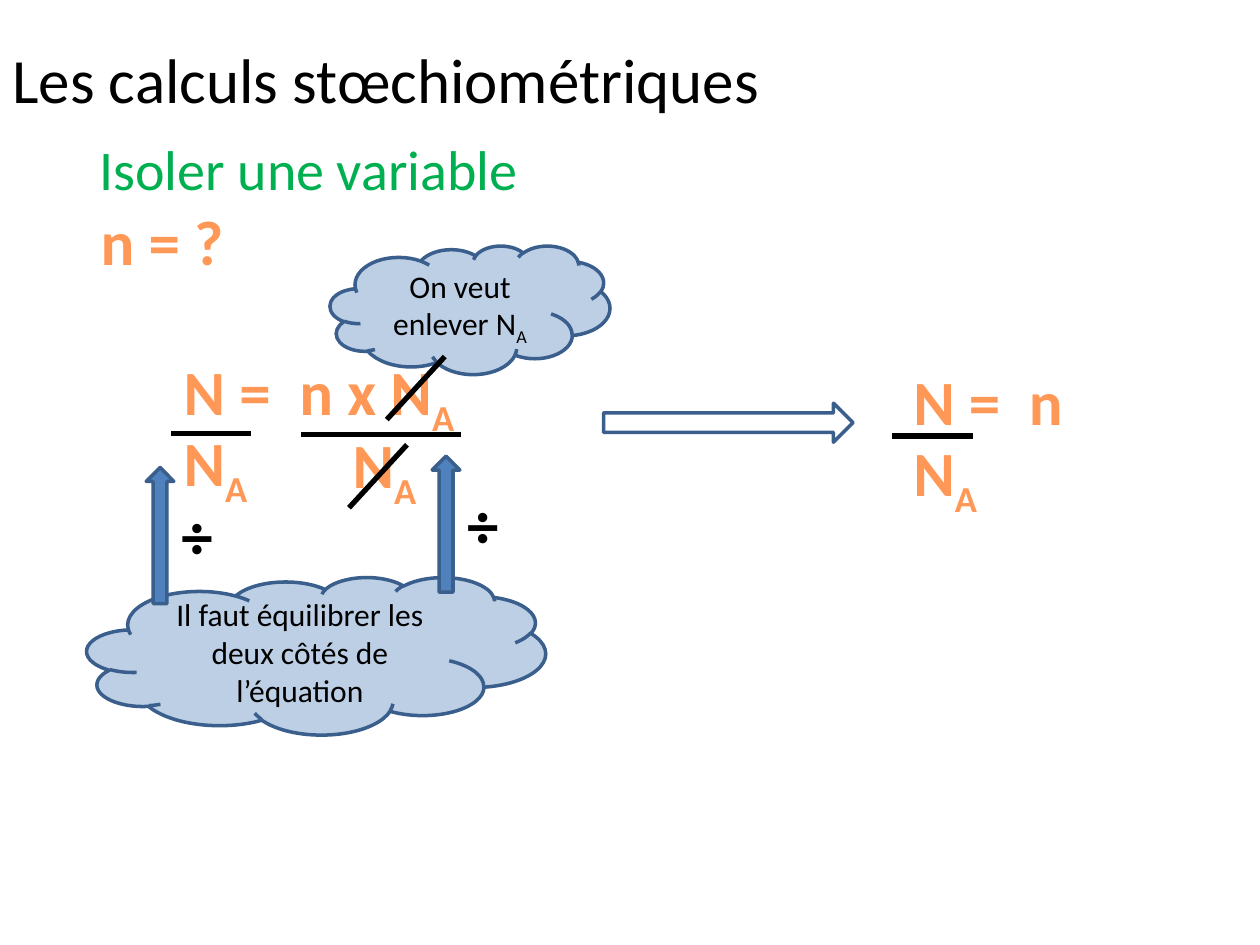
from lxml import etree
from pptx import Presentation
from pptx import util as u
from pptx.dml import color
from pptx.enum import shapes, text
from pptx.oxml import ns

BLACK, GREEN, ORANGE = "000000", "00B050", "FF9856"
BLUE, DARK_BLUE = "4F81BD", "3A5F8C"
SHAPE = shapes.MSO_SHAPE
ALIGN = text.PP_ALIGN


def rgb(value):
    return color.RGBColor.from_string(value)


class Board:
    def __init__(self, slide, font="Calibri"):
        self.slide = slide
        self.font = font

    def add_words(self, frame, content, size, hue, bold=False, subscript="", align=ALIGN.LEFT):
        paragraph = frame.paragraphs[0]
        paragraph.alignment = align
        for part, lowered in ((content, False), (subscript, True)):
            if not part:
                continue
            run = paragraph.add_run()
            run.text = part
            run.font.name = self.font
            run.font.size = u.Pt(size)
            run.font.bold = bold
            run.font.color.rgb = rgb(hue)
            if lowered:
                run.font._element.set("baseline", "-25000")

    def label(self, box, content, size=36, hue=ORANGE, bold=True, subscript="",
              align=ALIGN.LEFT, anchor=text.MSO_ANCHOR.TOP, wrap=True):
        shape = self.slide.shapes.add_textbox(*map(u.Inches, box))
        frame = shape.text_frame
        frame.word_wrap = wrap
        frame.vertical_anchor = anchor
        self.add_words(frame, content, size, hue, bold, subscript, align)

    def outline(self, kind, box, fill=None):
        shape = self.slide.shapes.add_shape(kind, *map(u.Inches, box))
        shape.shadow.inherit = False
        shape.line.color.rgb = rgb(DARK_BLUE)
        shape.line.width = u.Pt(2)
        if fill:
            shape.fill.solid()
            shape.fill.fore_color.rgb = rgb(fill)
        else:
            shape.fill.background()
        return shape

    def cloud(self, box, content, subscript=""):
        shape = self.outline(SHAPE.CLOUD, box, BLUE)
        fill_color = shape._element.spPr.find(ns.qn("a:solidFill"))[0]
        etree.SubElement(fill_color, ns.qn("a:alpha"), val="38000")
        frame = shape.text_frame
        frame.word_wrap = True
        frame.vertical_anchor = text.MSO_ANCHOR.MIDDLE
        self.add_words(frame, content, 18, BLACK, subscript=subscript, align=ALIGN.CENTER)

    def division(self, left, top):
        arrow = self.outline(SHAPE.DOWN_ARROW, (left, top, 0.22, 1.08), BLUE)
        arrow.rotation = 180
        self.label((left + 0.18, top + 0.18, 0.38, 0.71), "÷", hue=BLACK)

    def line(self, *ends):
        connector = self.slide.shapes.add_connector(
            shapes.MSO_CONNECTOR.STRAIGHT, *map(u.Inches, ends))
        connector.line.color.rgb = rgb(BLACK)
        connector.line.width = u.Pt(3)
        etree.SubElement(connector._element.spPr, ns.qn("a:effectLst"))


def main():
    presentation = Presentation()
    presentation.slide_width = u.Inches(10)
    presentation.slide_height = u.Inches(7.5)
    board = Board(presentation.slides.add_slide(presentation.slide_layouts[6]))

    board.label((0.69, 1.02, 4.31, 0.78), "Isoler une variable", 32, GREEN,
                bold=False, align=ALIGN.JUSTIFY)
    board.label((0, 0, 6.8, 1.25), "Les calculs stœchiométriques", hue=BLACK,
                bold=False, anchor=text.MSO_ANCHOR.MIDDLE)

    board.label((1.36, 2.75, 3.39, 0.7), "N =  n x N", subscript="A")
    board.label((0.7, 1.56, 1.19, 0.71), "n = ?", wrap=False)
    board.label((2.7, 3.33, 0.74, 0.71), "N", subscript="A", wrap=False)
    board.label((1.36, 3.31, 0.83, 0.71), "N", subscript="A")
    board.line(2.39, 3.45, 3.66, 3.45)
    board.line(1.36, 3.44, 1.99, 3.44)

    board.cloud((2.62, 1.95, 2.22, 1.02), "On veut enlever N", subscript="A")
    board.cloud((0.69, 4.58, 3.64, 1.25), "Il faut équilibrer les deux côtés de l’équation")
    for left, top in ((3.43, 3.62), (1.16, 3.71)):
        board.division(left, top)
    for right, top in ((3.53, 2.83), (3.23, 3.53)):
        board.line(right, top, right - 0.46, top + 0.5)

    board.label((7.15, 2.83, 1.6, 0.7), "N =  n")
    board.label((7.15, 3.39, 0.83, 0.71), "N", subscript="A")
    board.line(7.08, 3.46, 7.72, 3.46)
    board.outline(SHAPE.RIGHT_ARROW, (4.79, 3.2, 1.98, 0.31))

    presentation.save("out.pptx")


if __name__ == "__main__":
    main()
